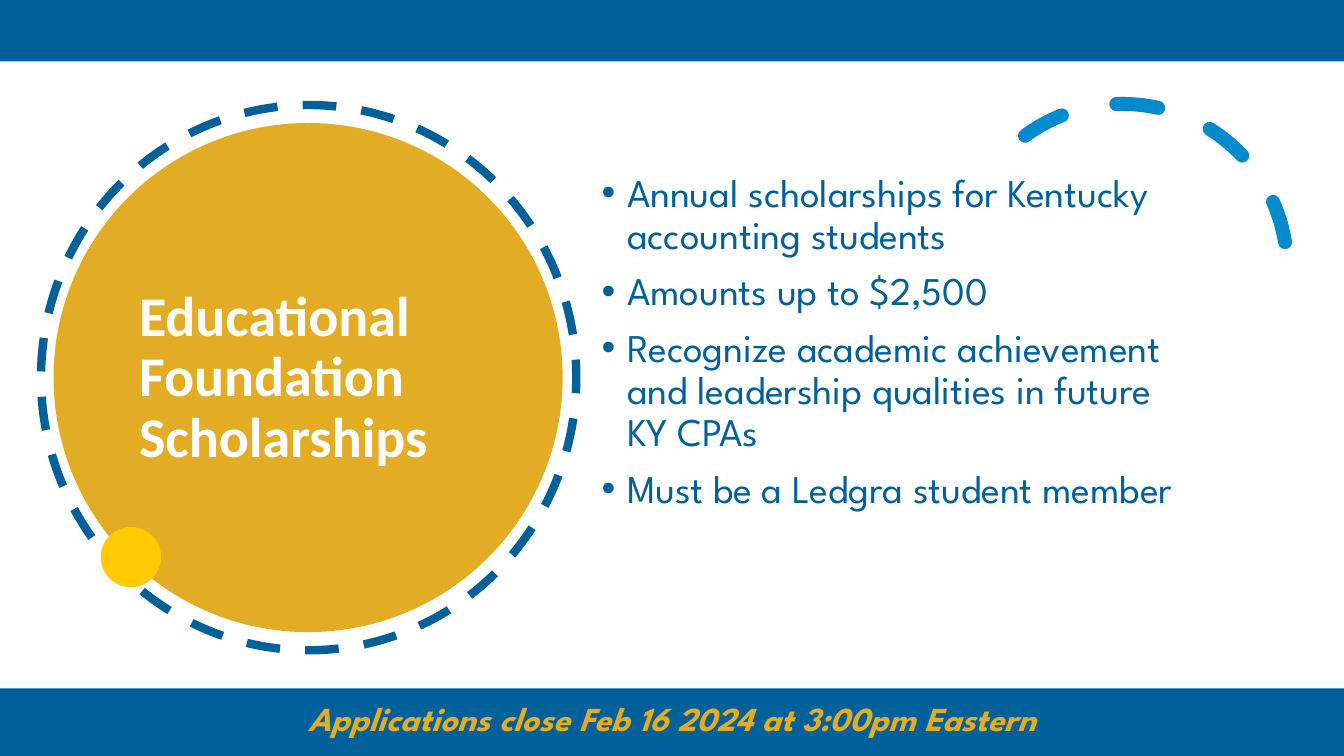
import lxml.etree
import pptx
import pptx.dml.color
import pptx.enum.dml
import pptx.enum.shapes
import pptx.enum.text
import pptx.oxml.ns
import pptx.util
from pptx.util import Cm

BLUE, GOLD = "00609A", "E2AC24"
SHAPE = pptx.enum.shapes.MSO_SHAPE
ALIGN = pptx.enum.text.PP_ALIGN


def add_plain(kind, box, color, line_width=None, cap="flat", angles=(), turn=0):
    """Add a filled shape, or a dashed outline when line_width is given."""
    shape = slide.shapes.add_shape(kind, *(Cm(length) for length in box))
    shape.shadow.inherit = False
    shape.rotation = turn
    for index, angle in enumerate(angles):
        shape.adjustments[index] = angle * 0.6
    rgb = pptx.dml.color.RGBColor.from_string(color)
    if line_width is None:
        shape.fill.solid()
        shape.fill.fore_color.rgb = rgb
        shape.line.fill.background()
    else:
        shape.fill.background()
        shape.line.color.rgb = rgb
        shape.line.width = pptx.util.Pt(line_width)
        shape.line.dash_style = pptx.enum.dml.MSO_LINE.DASH
        shape.line._get_or_add_ln().set("cap", cap)
    return shape


def write(holder, lines, *, box, size, font, color, bold=False, italic=False,
          align=ALIGN.LEFT, anchor=pptx.enum.text.MSO_ANCHOR.TOP,
          spacing=1.0, before=0, bulleted=False):
    holder.left, holder.top, holder.width, holder.height = (Cm(length) for length in box)
    frame = holder.text_frame
    frame.word_wrap = True
    frame.auto_size = pptx.enum.text.MSO_AUTO_SIZE.NONE
    frame.vertical_anchor = anchor
    frame.text = "\n".join(lines)
    for paragraph in frame.paragraphs:
        paragraph.alignment = align
        paragraph.line_spacing = spacing
        paragraph.space_before = pptx.util.Pt(before)
        style = paragraph.runs[0].font
        style.name, style.size = font, pptx.util.Pt(size)
        style.bold, style.italic = bold, italic
        style.color.rgb = pptx.dml.color.RGBColor.from_string(color)
        if bulleted:
            properties = paragraph._p.get_or_add_pPr()
            properties.set("marL", str(Cm(0.64)))
            properties.set("indent", str(-Cm(0.64)))
            for tag, name, value in (("a:buFont", "typeface", "Arial"),
                                     ("a:buChar", "char", "•")):
                bullet = lxml.etree.SubElement(properties, pptx.oxml.ns.qn(tag))
                bullet.set(name, value)


deck = pptx.Presentation()
deck.slide_width, deck.slide_height = Cm(33.87), Cm(19.05)
slide = deck.slides.add_slide(deck.slide_layouts[1])
title, benefits = slide.placeholders

disc = add_plain(SHAPE.OVAL, (1.35, 3.1, 12.83, 12.83), GOLD)
title._element.addprevious(disc._element)
write(title, ["Educational Foundation Scholarships"], box=(3.25, 3.89, 9.58, 11.3),
      size=40, font="Calibri", color="FFFFFF", bold=True, spacing=0.9,
      anchor=pptx.enum.text.MSO_ANCHOR.MIDDLE)

add_plain(SHAPE.ARC, (24.13, 2.62, 8.31, 8.31), "0289CE", line_width=10, cap="rnd",
          angles=(263.62, 29.69), turn=330.2)
add_plain(SHAPE.OVAL, (2.54, 13.28, 1.52, 1.52), "FFCA03")

write(benefits, ["Annual scholarships for Kentucky accounting students",
                 "Amounts up to $2,500",
                 "Recognize academic achievement and leadership qualities in future KY CPAs",
                 "Must be a Ledgra student member"],
      box=(14.91, 4.24, 15.37, 10.92), size=28, font="League Spartan", color=BLUE,
      spacing=0.9, before=10, bulleted=True)

for band_top, band_height in ((17.35, 1.7), (0, 1.55)):
    add_plain(SHAPE.RECTANGLE, (0, band_top, 33.87, band_height), BLUE)

deadline = slide.shapes.add_textbox(0, 0, 0, 0)
write(deadline, ["Applications close Feb 16 2024 at 3:00pm Eastern"],
      box=(0, 17.45, 33.87, 1.27), size=24, font="League Spartan", color=GOLD,
      bold=True, italic=True, align=ALIGN.CENTER)

add_plain(SHAPE.ARC, (0.91, 2.77, 13.74, 13.49), BLUE, line_width=6,
          angles=(233.59, 219.33), turn=270)

deck.save("out.pptx")
